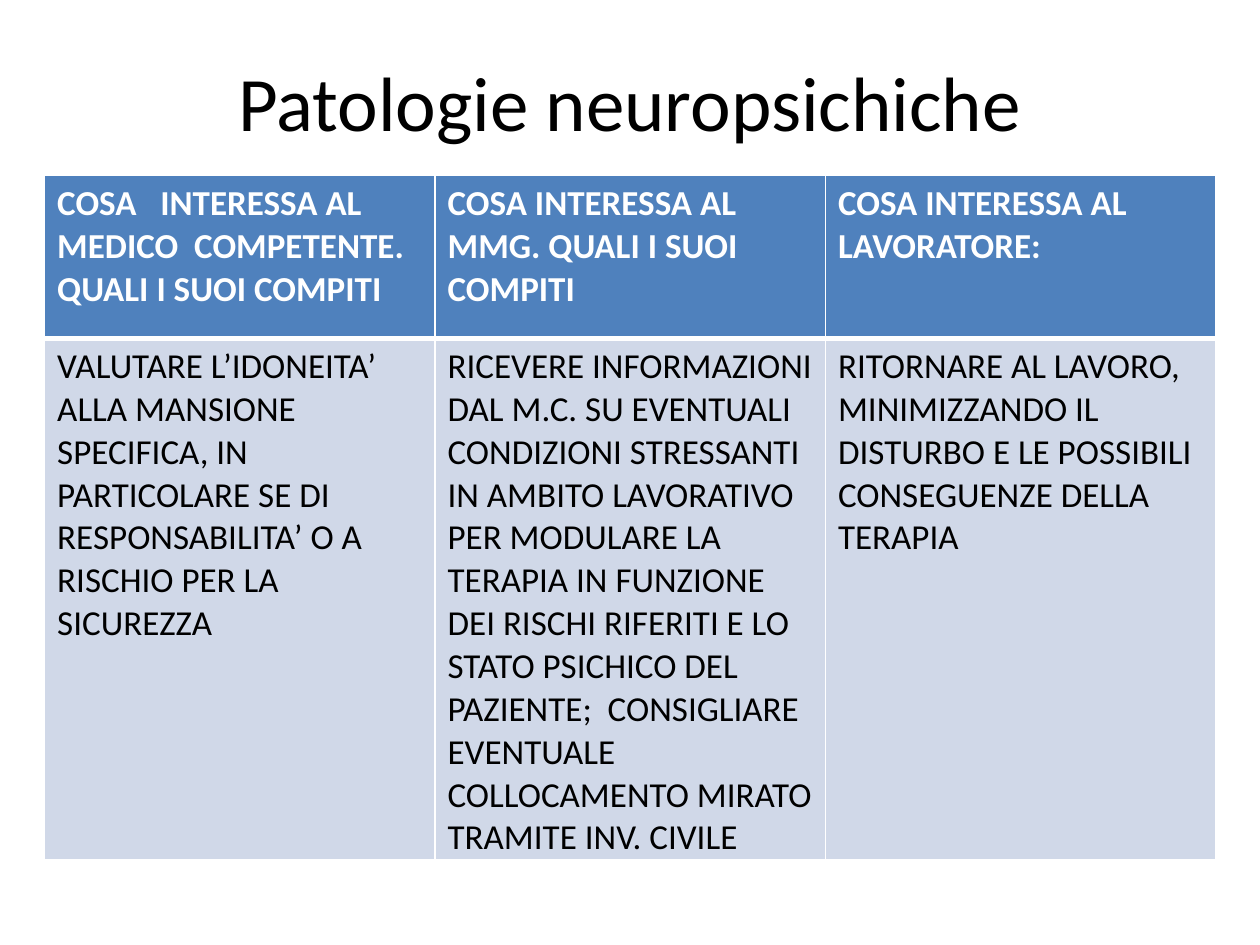
from lxml import etree
from pptx import Presentation
from pptx.dml.color import RGBColor
from pptx.enum.text import MSO_ANCHOR, PP_ALIGN
from pptx.oxml.ns import qn
from pptx.util import Cm, Pt

LEFT, CENTER = PP_ALIGN.LEFT, PP_ALIGN.CENTER
TOP, MIDDLE = MSO_ANCHOR.TOP, MSO_ANCHOR.MIDDLE

FONT = "Calibri"
COLORS = {
    "text": "000000",
    "header_text": "FFFFFF",
    "header_fill": "4F81BD",
    "body_fill": "D0D8E8",
    "border": "FFFFFF",
}

TITLE = "Patologie neuropsichiche"
HEADERS = [
    "COSA   INTERESSA AL MEDICO  COMPETENTE. QUALI I SUOI COMPITI",
    "COSA INTERESSA AL MMG. QUALI I SUOI COMPITI",
    "COSA INTERESSA AL LAVORATORE:",
]
TASKS = [
    "VALUTARE L’IDONEITA’ ALLA MANSIONE SPECIFICA, IN PARTICOLARE SE DI "
    "RESPONSABILITA’ O A RISCHIO PER LA SICUREZZA",
    "RICEVERE INFORMAZIONI DAL M.C. SU EVENTUALI CONDIZIONI STRESSANTI "
    "IN AMBITO LAVORATIVO PER MODULARE LA TERAPIA IN FUNZIONE DEI RISCHI "
    "RIFERITI E LO STATO PSICHICO DEL PAZIENTE;  CONSIGLIARE EVENTUALE "
    "COLLOCAMENTO MIRATO TRAMITE INV. CIVILE",
    "RITORNARE AL LAVORO, MINIMIZZANDO IL DISTURBO E LE POSSIBILI "
    "CONSEGUENZE DELLA TERAPIA",
]
COL_WIDTH = Cm(7.87)
ROW_HEIGHTS = [Cm(3.29), Cm(10.51)]


def rgb(name):
    return RGBColor.from_string(COLORS[name])


def write_text(tf, text, *, size=20, color="text", bold=False, align=LEFT):
    p = tf.paragraphs[0]
    p.alignment = align
    r = p.add_run()
    r.text = text
    r.font.name = FONT
    r.font.size = Pt(size)
    r.font.bold = bold
    r.font.color.rgb = rgb(color)


def add_title(s, text):
    sp = s.shapes.add_textbox(Cm(1.3), Cm(0.74), Cm(22.81), Cm(2.59))
    tf = sp.text_frame
    tf.word_wrap = True
    tf.vertical_anchor = MIDDLE
    write_text(tf, text, size=44, align=CENTER)


def set_borders(cell, **widths):
    # Border lines must come before the fill in the cell properties
    tcPr = cell._tc.get_or_add_tcPr()
    for i, side in enumerate("LRTB"):
        ln = etree.Element(qn(f"a:ln{side}"), w=str(Pt(widths.get(side, 1))))
        fill = etree.SubElement(ln, qn("a:solidFill"))
        etree.SubElement(fill, qn("a:srgbClr"), val=COLORS["border"])
        tcPr.insert(i, ln)


def fill_row(table, row, texts, fill, thick_side, **text_format):
    for col, text in enumerate(texts):
        cell = table.cell(row, col)
        cell.vertical_anchor = TOP
        cell.fill.solid()
        cell.fill.fore_color.rgb = rgb(fill)
        set_borders(cell, **{thick_side: 3})
        write_text(cell.text_frame, text, **text_format)


def add_task_table(s):
    n = len(HEADERS)
    frame = s.shapes.add_table(len(ROW_HEIGHTS), n, Cm(0.9), Cm(3.54),
                               COL_WIDTH * n, sum(ROW_HEIGHTS))
    table = frame.table
    for column in table.columns:
        column.width = COL_WIDTH
    for row, height in zip(table.rows, ROW_HEIGHTS):
        row.height = height
    fill_row(table, 0, HEADERS, "header_fill", "B",
             color="header_text", bold=True)
    fill_row(table, 1, TASKS, "body_fill", "T")


def main():
    prs = Presentation()
    prs.slide_width, prs.slide_height = Cm(25.4), Cm(19.05)
    s = prs.slides.add_slide(prs.slide_layouts[6])

    # Heading
    add_title(s, TITLE)
    # Interests and tasks of each party
    add_task_table(s)

    prs.save("out.pptx")


if __name__ == "__main__":
    main()
